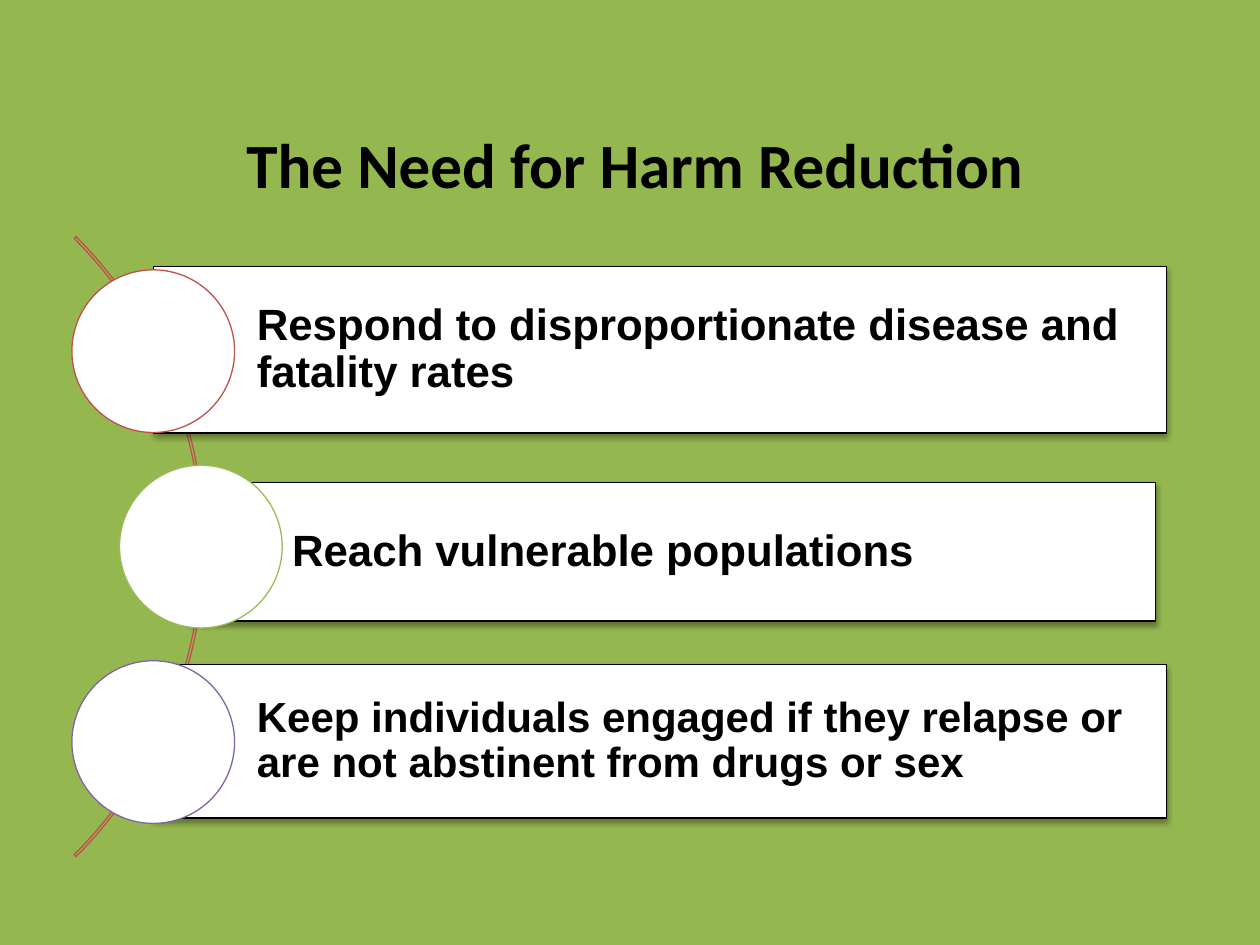
from lxml import etree
from pptx import Presentation
from pptx.dml.color import RGBColor
from pptx.enum.shapes import MSO_SHAPE
from pptx.enum.text import MSO_ANCHOR, PP_ALIGN
from pptx.oxml.ns import qn
from pptx.util import Cm, Pt

ARC, BAR, CIRCLE = MSO_SHAPE.BLOCK_ARC, MSO_SHAPE.RECTANGLE, MSO_SHAPE.OVAL
MIDDLE = MSO_ANCHOR.MIDDLE
LEFT, CENTER = PP_ALIGN.LEFT, PP_ALIGN.CENTER

TITLE = "The Need for Harm Reduction"
NEEDS = [
    {"text": "Respond to disproportionate disease and fatality rates", "size": "large",
     "accent": "red", "circle_x": 3.09, "bar": (3.1, 5.38, 20.42, 3.35)},
    {"text": "Reach vulnerable populations", "size": "large",
     "accent": "green", "circle_x": 4.05, "bar": (3.81, 9.73, 19.48, 2.79)},
    {"text": "Keep individuals engaged if they relapse or are not abstinent from drugs or sex",
     "size": "small", "accent": "purple", "circle_x": 3.09, "bar": (3.1, 13.39, 20.42, 3.1)},
]
THEME = {
    "background": "95B74F", "panel": "FFFFFF", "ink": "000000",
    "red": "C0504D", "green": "9BBB59", "purple": "8064A2",
    "title": 36, "large": 25, "small": 24, "line": 0.75,
    "title_font": "Calibri", "body_font": "Arial",
}
TITLE_BOX = (1.27, 2.34, 23.06, 1.9)
ARC_CENTER, ARC_SIZE = (-4.72, 11.02), 17.68
ARC_ADJUSTMENTS = (189, 27, 0.003)
CIRCLE_SIZE, CIRCLE_PITCH = 3.28, 3.94
BAR_FRAME = {"margin_left": Cm(2.08), "margin_right": Cm(0.18), "margin_top": Cm(0.18),
             "margin_bottom": Cm(0.18), "vertical_anchor": MIDDLE, "word_wrap": True}
TITLE_FRAME = {"vertical_anchor": MIDDLE, "word_wrap": True}
SHADOW = {"blurRad": Pt(3.1), "dist": Pt(1.8), "dir": 90 * 60000, "rotWithShape": 0}
SHADOW_ALPHA = 35


def color(name):
    return RGBColor.from_string(THEME[name])


def apply(target, values):
    for name, value in values.items():
        setattr(target, name, value)


def centered(x, y, size):
    return x - size / 2, y - size / 2, size, size


def add_outline(slide, kind, box, accent, fill="panel"):
    shape = slide.shapes.add_shape(kind, *map(Cm, box))
    if fill:
        shape.fill.solid()
        shape.fill.fore_color.rgb = color(fill)
    else:
        shape.fill.background()
    shape.line.color.rgb = color(accent)
    shape.line.width = Pt(THEME["line"])
    shape.shadow.inherit = False
    return shape


def add_shadow(shape):
    effects = shape.element.spPr.find(qn("a:effectLst"))
    outer = etree.SubElement(effects, qn("a:outerShdw"),
                             {name: str(value) for name, value in SHADOW.items()})
    ink = etree.SubElement(outer, qn("a:srgbClr"), val=THEME["ink"])
    etree.SubElement(ink, qn("a:alpha"), val=str(SHADOW_ALPHA * 1000))


def write(shape, text, size, font, frame_format, paragraph_format):
    frame = shape.text_frame
    apply(frame, frame_format)
    paragraph = frame.paragraphs[0]
    paragraph.text = text
    apply(paragraph, paragraph_format)
    letters = paragraph.runs[0].font
    apply(letters, {"name": THEME[font], "size": Pt(THEME[size]), "bold": True})
    letters.color.rgb = color("ink")


def main():
    """Build the harm reduction slide: an arc of circles with a bar for each need."""
    deck = Presentation()
    apply(deck, {"slide_width": Cm(25.4), "slide_height": Cm(19.05)})
    slide = deck.slides.add_slide(deck.slide_layouts[6])
    slide.background.fill.solid()
    slide.background.fill.fore_color.rgb = color("background")

    title = slide.shapes.add_textbox(*map(Cm, TITLE_BOX))
    write(title, TITLE, "title", "title_font", TITLE_FRAME, {"alignment": CENTER})

    arc = add_outline(slide, ARC, centered(*ARC_CENTER, ARC_SIZE), "red", fill=None)
    for index, value in enumerate(ARC_ADJUSTMENTS):
        arc.adjustments[index] = value

    for index, need in enumerate(NEEDS):
        bar = add_outline(slide, BAR, need["bar"], "ink")
        add_shadow(bar)
        write(bar, need["text"], need["size"], "body_font", BAR_FRAME,
              {"alignment": LEFT, "line_spacing": 0.9})
        circle_y = ARC_CENTER[1] + (index - (len(NEEDS) - 1) / 2) * CIRCLE_PITCH
        add_outline(slide, CIRCLE, centered(need["circle_x"], circle_y, CIRCLE_SIZE),
                    need["accent"])

    deck.save("out.pptx")


if __name__ == "__main__":
    main()
